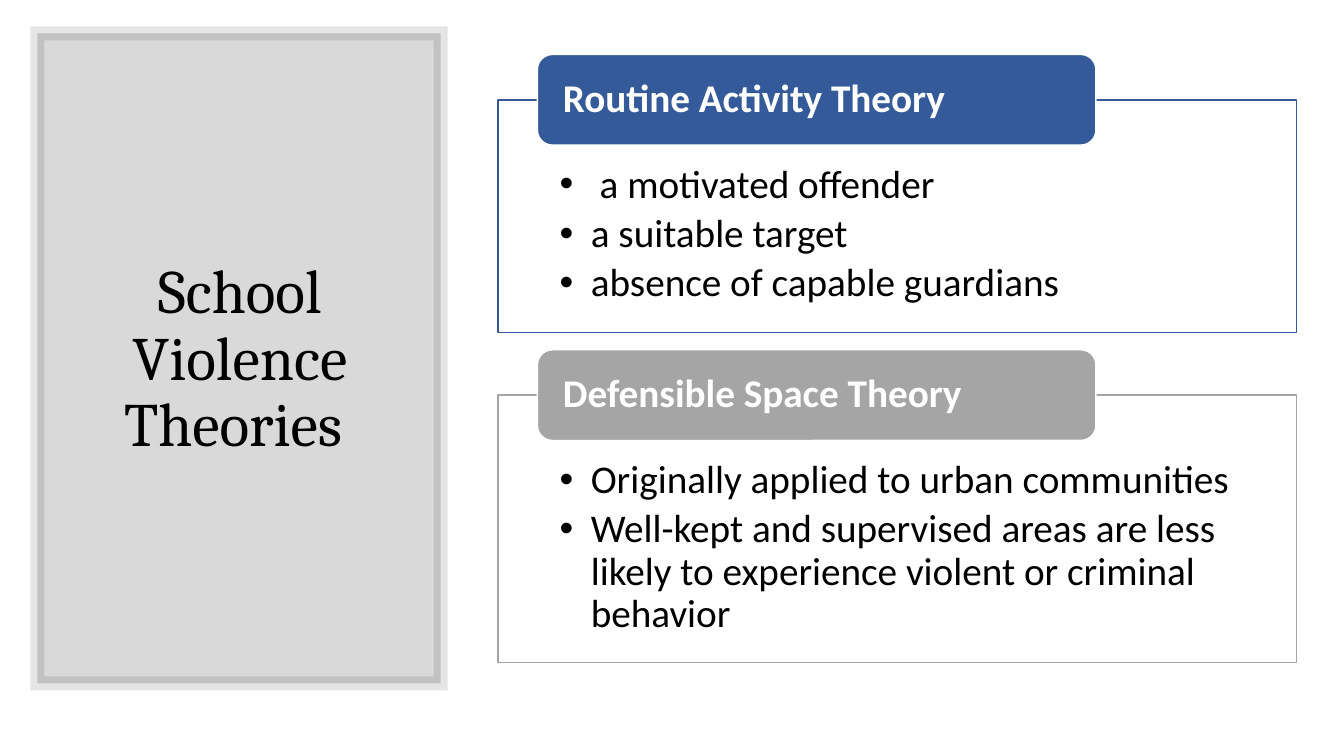
from pptx import Presentation
from pptx.dml.color import RGBColor
from pptx.enum.shapes import MSO_SHAPE
from pptx.enum.text import MSO_ANCHOR, PP_ALIGN
from pptx.oxml.ns import qn
from pptx.util import Inches, Pt
from lxml.etree import SubElement

BLACK = RGBColor(0x00, 0x00, 0x00)
WHITE = RGBColor(0xFF, 0xFF, 0xFF)
BLUE = RGBColor(0x34, 0x5A, 0x9A)
GRAY = RGBColor(0xA5, 0xA5, 0xA5)

THEORIES = [
    ("Routine Activity Theory", BLUE, 0.54, 2.31,
     [" a motivated offender", "a suitable target", "absence of capable guardians"]),
    ("Defensible Space Theory", GRAY, 3.47, 2.65,
     ["Originally applied to urban communities",
      "Well-kept and supervised areas are less likely to experience violent or criminal behavior"]),
]


class TheorySlide:
    title_font = "Cambria"
    body_font = "Calibri"
    title_size = Pt(44)
    body_size = Pt(28)

    def __init__(self, prs):
        self.slide = prs.slides.add_slide(prs.slide_layouts[6])

    def set_alpha(self, fill, percent):
        color = fill._xPr.find(qn("a:solidFill"))[0]
        SubElement(color, qn("a:alpha"), val=str(percent * 1000))

    def box(self, kind, left, top, width, height, fill, line, weight):
        sp = self.slide.shapes.add_shape(
            kind, Inches(left), Inches(top), Inches(width), Inches(height))
        sp.shadow.inherit = False
        sp.fill.solid()
        sp.fill.fore_color.rgb = fill
        sp.line.color.rgb = line
        sp.line.width = Pt(weight)
        return sp

    def set_frame(self, tf, anchor, left, top, right, bottom):
        tf.word_wrap = True
        tf.vertical_anchor = anchor
        tf.margin_left, tf.margin_top = Inches(left), Inches(top)
        tf.margin_right, tf.margin_bottom = Inches(right), Inches(bottom)

    def set_text(self, p, text, font, size, color, align=PP_ALIGN.LEFT, bold=False):
        p.text = text
        p.alignment = align
        p.line_spacing = 0.9
        for r in p.runs:
            r.font.name = font
            r.font.size = size
            r.font.bold = bold
            r.font.color.rgb = color

    def bullet(self, p):
        p.space_after = Pt(5)
        pPr = p._p.get_or_add_pPr()
        pPr.set("marL", str(Inches(0.31)))
        pPr.set("indent", str(-Inches(0.31)))
        SubElement(pPr, qn("a:buFont"), typeface="Arial")
        SubElement(pPr, qn("a:buChar"), char="•")

    def title_panel(self, text):
        sp = self.box(MSO_SHAPE.RECTANGLE, 0.37, 0.33, 4, 6.45, BLACK, BLACK, 10)
        self.set_alpha(sp.fill, 15)
        self.set_alpha(sp.line.fill, 10)
        SubElement(sp.line.fill._xPr, qn("a:miter"), lim="800000")
        tb = self.slide.shapes.add_textbox(
            Inches(0.65), Inches(0.7), Inches(3.46), Inches(5.75))
        tf = tb.text_frame
        self.set_frame(tf, MSO_ANCHOR.MIDDLE, 0.1, 0.05, 0.1, 0.05)
        self.set_text(tf.paragraphs[0], text, self.title_font, self.title_size,
                      BLACK, PP_ALIGN.CENTER)

    def theory(self, heading, color, top, height, points):
        body = self.box(MSO_SHAPE.RECTANGLE, 4.94, top + 0.45, 7.92, height,
                        WHITE, color, 1)
        self.set_alpha(body.fill, 90)
        tf = body.text_frame
        self.set_frame(tf, MSO_ANCHOR.TOP, 0.61, 0.64, 0.61, 0.22)
        for i, point in enumerate(points):
            p = tf.add_paragraph() if i else tf.paragraphs[0]
            self.set_text(p, point, self.body_font, self.body_size, BLACK)
            self.bullet(p)
        tab = self.box(MSO_SHAPE.ROUNDED_RECTANGLE, 5.33, top, 5.54, 0.9,
                       color, WHITE, 1)
        self.set_frame(tab.text_frame, MSO_ANCHOR.MIDDLE, 0.21, 0, 0.21, 0)
        self.set_text(tab.text_frame.paragraphs[0], heading, self.body_font,
                      self.body_size, WHITE, bold=True)


def main():
    prs = Presentation()
    prs.slide_width = Inches(13.33)
    prs.slide_height = Inches(7.5)
    s = TheorySlide(prs)
    s.title_panel("School Violence Theories ")
    for theory in THEORIES:
        s.theory(*theory)
    prs.save("out.pptx")


if __name__ == "__main__":
    main()
